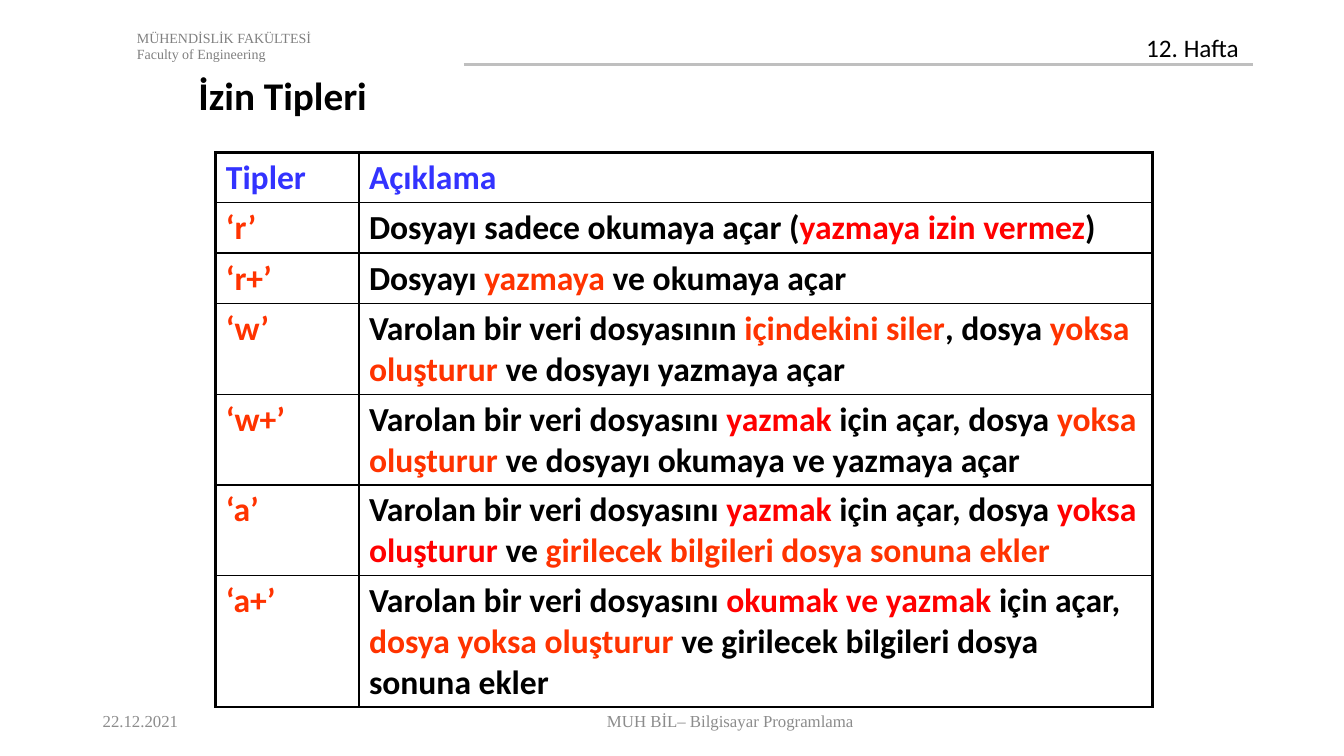
from lxml.etree import SubElement
from pptx import Presentation
from pptx.dml.color import RGBColor
from pptx.enum.shapes import MSO_CONNECTOR as Connector
from pptx.enum.text import MSO_ANCHOR as Anchor, PP_ALIGN as Align
from pptx.oxml import parse_xml
from pptx.oxml.ns import nsdecls, qn
from pptx.util import Pt

PX = 9144  # 100 px to the inch
BLACK, RED, ORANGE, BLUE = "000000", "FF0000", "FF3300", "3333FF"
SANS, SERIF = "Calibri", "Times New Roman"

HEADER_TEXT = {"name": SERIF, "size": Pt(10), "color": "808080"}
WEEK_TEXT = {"name": SANS, "size": Pt(18), "color": BLACK}
TITLE_TEXT = {"name": SANS, "size": Pt(28), "bold": True, "color": BLACK}
FOOTER_TEXT = {"name": SERIF, "size": Pt(12), "color": "8C8C8C"}
TABLE_TEXT = {"name": SANS, "size": Pt(24), "bold": True}

EXISTING = ("Varolan bir veri dosyasını ", BLACK)
OPENS_FILE = (" için açar, dosya ", BLACK)
MODES = [
    ("‘r’", [("Dosyayı sadece okumaya açar (", BLACK), ("yazmaya izin vermez", RED), (")", BLACK)]),
    ("‘r+’", [("Dosyayı ", BLACK), ("yazmaya", ORANGE), (" ve okumaya açar", BLACK)]),
    ("‘w’", [("Varolan bir veri dosyasının ", BLACK), ("içindekini siler", ORANGE),
             (", dosya ", BLACK), ("yoksa oluşturur", ORANGE),
             (" ve dosyayı yazmaya açar", BLACK)]),
    ("‘w+’", [EXISTING, ("yazmak", RED), OPENS_FILE, ("yoksa oluşturur", ORANGE),
              (" ve dosyayı okumaya ve yazmaya açar", BLACK)]),
    ("‘a’", [EXISTING, ("yazmak", RED), OPENS_FILE, ("yoksa oluşturur ", RED),
             ("ve ", BLACK), ("girilecek bilgileri dosya sonuna ekler", ORANGE)]),
    ("‘a+’", [EXISTING, ("okumak ve yazmak ", RED), ("için açar, ", BLACK),
              ("dosya yoksa oluşturur", ORANGE),
              (" ve girilecek bilgileri dosya sonuna ekler", BLACK)]),
]
ROWS = [[[("Tipler", BLUE)], [("Açıklama", BLUE)]]]
ROWS += [[[(mode, ORANGE)], description] for mode, description in MODES]


def rgb(value):
    return RGBColor.from_string(value)


class SlideBuilder:
    def __init__(self, slide, outer_border=2.25, inner_border=1):
        self.slide = slide
        self.outer_border = outer_border
        self.inner_border = inner_border

    def add_run(self, paragraph, text, style):
        run = paragraph.add_run()
        run.text = text
        for key, value in style.items():
            if key == "color":
                run.font.color.rgb = rgb(value)
            else:
                setattr(run.font, key, value)

    def text(self, box, lines, style, anchor=Anchor.TOP, align=Align.LEFT):
        frame = self.slide.shapes.add_textbox(*(PX * n for n in box)).text_frame
        frame.word_wrap = True
        frame.vertical_anchor = anchor
        for index, line in enumerate(lines):
            paragraph = frame.add_paragraph() if index else frame.paragraphs[0]
            paragraph.alignment = align
            self.add_run(paragraph, line, style)

    def line(self, start, end, color, width):
        points = (PX * n for n in start + end)
        connector = self.slide.shapes.add_connector(Connector.STRAIGHT, *points)
        connector.line.color.rgb = rgb(color)
        connector.line.width = Pt(width)
        SubElement(connector._element.spPr, qn("a:effectLst"))

    def borders(self, cell, outer_sides):
        """Draw all four cell borders, thicker on the sides in outer_sides."""
        properties = cell._tc.get_or_add_tcPr()
        for index, side in enumerate("LRTB"):
            width = Pt(self.outer_border if side in outer_sides else self.inner_border)
            properties.insert(index, parse_xml(
                f'<a:ln{side} {nsdecls("a")} w="{width}"><a:solidFill>'
                f'<a:srgbClr val="{BLACK}"/></a:solidFill></a:ln{side}>'))

    def table(self, left, top, widths, heights, rows, style):
        box = (left, top, sum(widths), sum(heights))
        table = self.slide.shapes.add_table(
            len(rows), len(widths), *(PX * n for n in box)).table
        table.first_row = table.horz_banding = False
        for column, width in zip(table.columns, widths):
            column.width = PX * width
        for row, height in zip(table.rows, heights):
            row.height = PX * height
        for i, row in enumerate(rows):
            for j, runs in enumerate(row):
                cell = table.cell(i, j)
                cell.fill.background()
                edges = {"L": j == 0, "R": j == len(widths) - 1,
                         "T": i == 0, "B": i == len(rows) - 1}
                self.borders(cell, [side for side in edges if edges[side]])
                for text, color in runs:
                    self.add_run(cell.text_frame.paragraphs[0], text,
                                 {**style, "color": color})


def main():
    presentation = Presentation()
    presentation.slide_width, presentation.slide_height = PX * 1333, PX * 750
    builder = SlideBuilder(presentation.slides.add_slide(presentation.slide_layouts[6]))

    builder.line((460, 64), (1243, 64), "BFBFBF", 1.5)
    builder.text((126, 24, 667, 44), ["MÜHENDİSLİK FAKÜLTESİ", "Faculty of Engineering"],
                 HEADER_TEXT)
    builder.text((1127, 27, 115, 40), ["12. Hafta"], WEEK_TEXT)
    builder.table(214, 151, [142, 787], [50] * 3 + [90] * 3 + [130], ROWS, TABLE_TEXT)
    builder.text((187, 66, 471, 57), ["İzin Tipleri"], TITLE_TEXT)
    builder.text((92, 695, 157, 40), ["22.12.2021"], FOOTER_TEXT, Anchor.MIDDLE)
    builder.text((273, 695, 903, 40), ["MUH BİL– Bilgisayar Programlama"], FOOTER_TEXT,
                 Anchor.MIDDLE, Align.CENTER)

    presentation.save("out.pptx")


if __name__ == "__main__":
    main()
